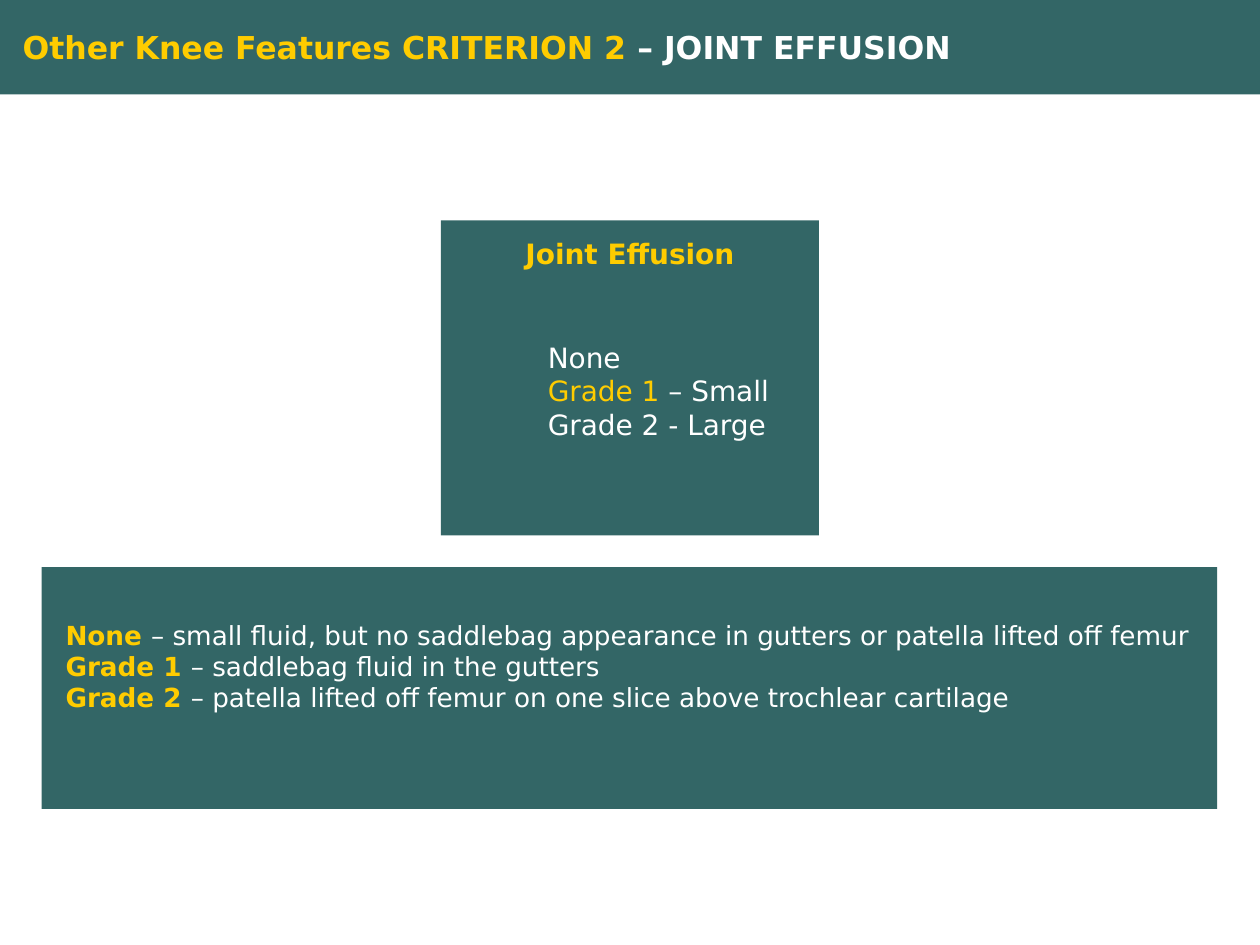
from pptx import Presentation
from pptx.dml.color import RGBColor
from pptx.enum.shapes import MSO_SHAPE
from pptx.enum.text import MSO_ANCHOR, MSO_AUTO_SIZE, PP_ALIGN
from pptx.oxml.ns import qn
from pptx.util import Inches, Pt

FONT = "DejaVu Sans"
COLORS = {"teal": "336666", "gold": "FFCC00", "white": "FFFFFF"}

TITLE = [[("Other Knee Features CRITERION 2 ", "gold", True),
          ("– JOINT EFFUSION", "white", True)]]
HEADING = [[("Joint Effusion", "gold", True)]]
GRADES = [
    [("None", "white", False)],
    [("Grade 1", "gold", False), (" – Small", "white", False)],
    [("Grade 2 - Large", "white", False)],
]
DEFINITIONS = [
    ("None", "small fluid, but no saddlebag appearance in gutters or patella lifted off femur"),
    ("Grade 1", "saddlebag fluid in the gutters"),
    ("Grade 2", "patella lifted off femur on one slice above trochlear cartilage"),
]
PANELS = [
    (0.33, 4.5, 9.33, 1.92),
    (0, 0, 10, 0.75),
    (3.5, 1.75, 3, 2.5),
]


def color(name):
    return RGBColor.from_string(COLORS[name])


def add_panel(s, box):
    sp = s.shapes.add_shape(MSO_SHAPE.RECTANGLE, *map(Inches, box))
    sp.shadow.inherit = False
    sp.fill.solid()
    sp.fill.fore_color.rgb = color("teal")
    sp.line.fill.background()


def write(sp, lines, box, size, align=PP_ALIGN.LEFT, anchor=MSO_ANCHOR.TOP,
          wrap=True, spacing=1.0, before=0):
    sp.left, sp.top, sp.width, sp.height = map(Inches, box)
    tf = sp.text_frame
    tf.word_wrap = wrap
    tf.auto_size = MSO_AUTO_SIZE.NONE
    tf.vertical_anchor = anchor
    for i, runs in enumerate(lines):
        p = tf.paragraphs[0] if i == 0 else tf.add_paragraph()
        p.alignment = align
        p.line_spacing = spacing
        p.space_before = Pt(before)
        for text, name, bold in runs:
            r = p.add_run()
            r.text = text
            r.font.name = FONT
            r.font.size = Pt(size)
            r.font.bold = bold
            r.font.color.rgb = color(name)


def hang_without_bullets(tf, indent):
    for p in tf.paragraphs:
        pPr = p._p.get_or_add_pPr()
        pPr.set("marL", str(Inches(indent)))
        pPr.set("indent", str(-Inches(indent)))
        pPr.append(pPr.makeelement(qn("a:buNone"), {}))


def main():
    prs = Presentation()
    prs.slide_width, prs.slide_height = Inches(10), Inches(7.5)
    s = prs.slides.add_slide(prs.slide_layouts[1])
    title, body = s.shapes.title, s.placeholders[1]

    for box in PANELS:
        add_panel(s, box)
    for sp in (body, title):
        s.shapes._spTree.append(sp._element)

    write(title, TITLE, (0.08, 0.17, 10, 0.4), 18, anchor=MSO_ANCHOR.MIDDLE)
    definitions = [[(f"{grade} ", "gold", True), (f"– {meaning}", "white", False)]
                   for grade, meaning in DEFINITIONS]
    write(body, definitions, (0.42, 4.91, 9.42, 1.76), 15, spacing=0.8, before=3.5)
    hang_without_bullets(body.text_frame, 0.38)

    for lines, box, opts in [
        (HEADING, (3.5, 1.83, 3, 0.42), {"align": PP_ALIGN.CENTER}),
        (GRADES, (4.25, 2.65, 2.03, 0.91), {"wrap": False}),
    ]:
        sp = s.shapes.add_textbox(*map(Inches, box))
        write(sp, lines, box, 16, **opts)

    prs.save("out.pptx")


if __name__ == "__main__":
    main()
